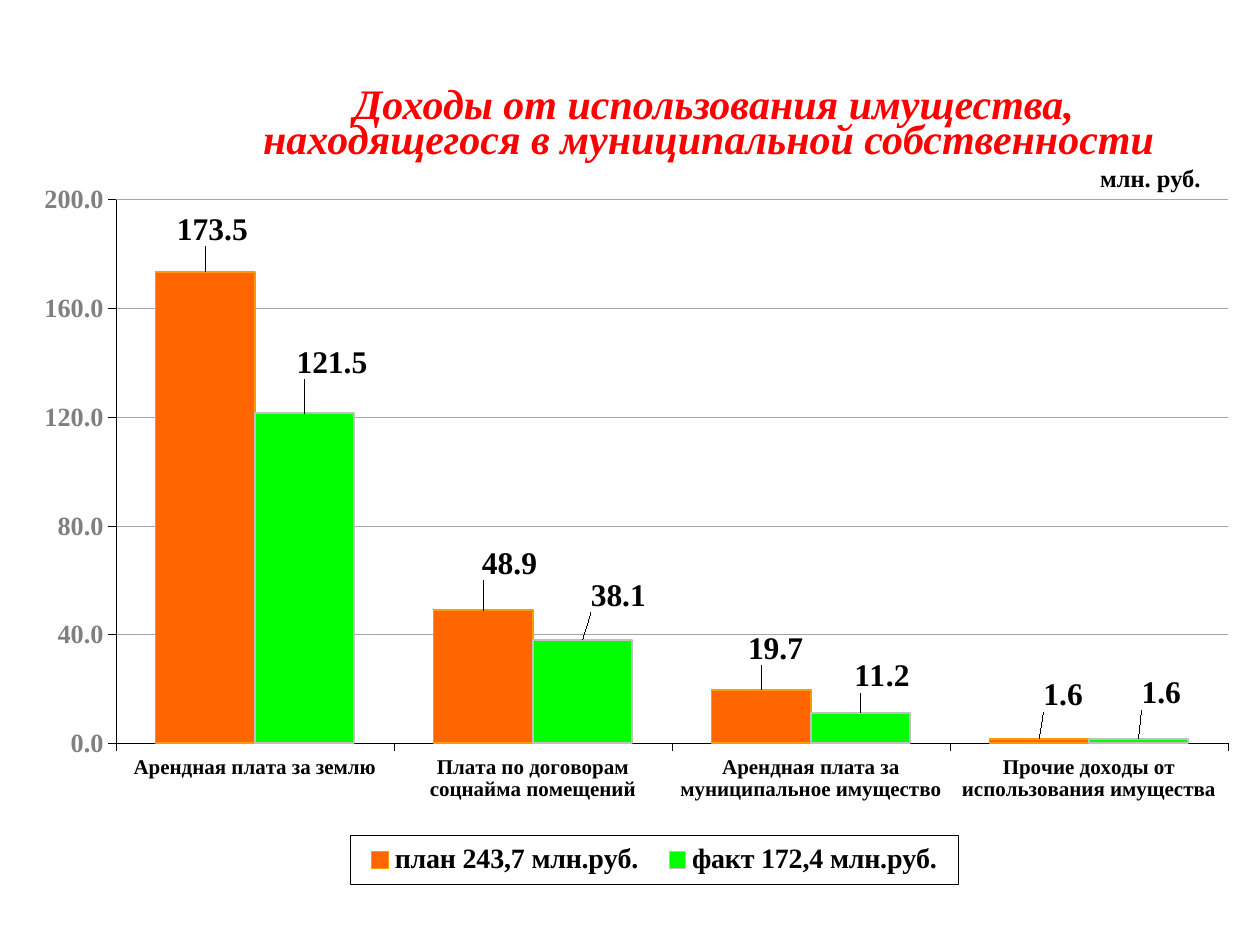
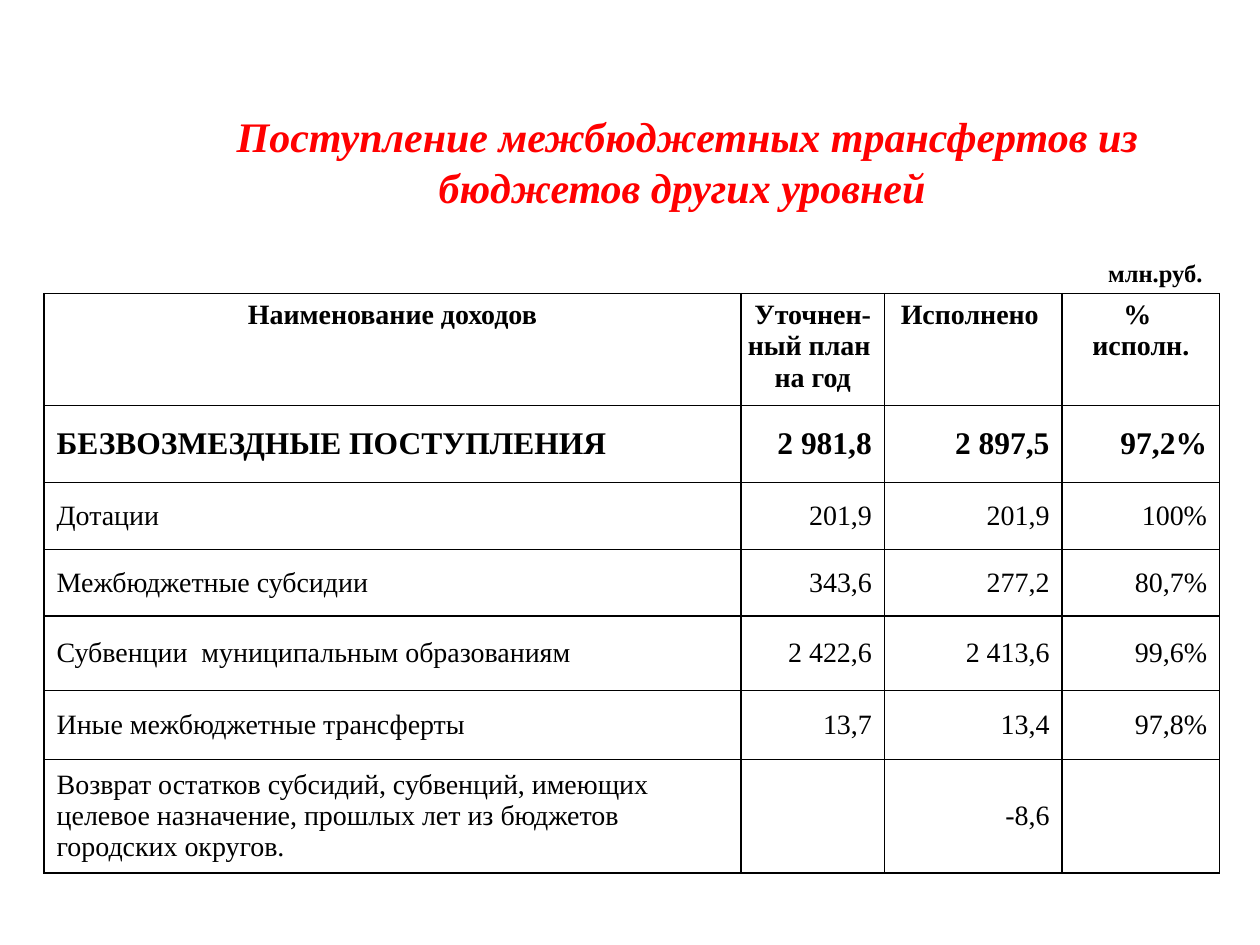
"""Build two slides on municipal budget income: a plan/fact chart and a transfers table."""
from dataclasses import dataclass

from pptx import Presentation
from pptx import util as u
from pptx.chart.data import CategoryChartData
from pptx.dml.color import RGBColor
from pptx.enum import chart as charts, text as texts
from pptx.oxml import parse_xml
from pptx.oxml.ns import nsdecls, qn

FACE = "Times New Roman"
BLACK, RED, GREY, GRID = "000000", "FF0000", "808080", "A6A6A6"
WIDTH, HEIGHT = u.Inches(10), u.Inches(7.5)
CENTER, RIGHT, LEFT = texts.PP_ALIGN.CENTER, texts.PP_ALIGN.RIGHT, texts.PP_ALIGN.LEFT
TOP, MIDDLE = texts.MSO_ANCHOR.TOP, texts.MSO_ANCHOR.MIDDLE


@dataclass(frozen=True)
class Area:
    """A rectangle in percent of the slide's width and height."""
    left: float
    top: float
    width: float
    height: float

    def box(self) -> tuple:
        """Return left, top, width and height as lengths."""
        return across(self.left), down(self.top), across(self.width), down(self.height)


@dataclass(frozen=True)
class Bars:
    """One chart series with label shifts in percent of the chart."""
    name: str
    values: tuple
    fill: str
    edge: str
    shifts: tuple


@dataclass(frozen=True)
class Row:
    """One table row with its height in percent of the slide."""
    height: float
    cells: tuple
    size: int = 16
    bold: bool = False
    header: bool = False


CATEGORIES = (
    "Арендная плата за землю",
    "Плата по договорам соцнайма помещений",
    "Арендная плата за муниципальное имущество",
    "Прочие доходы от использования имущества",
)
SERIES = (
    Bars("план 243,7 млн.руб.", (173.5, 48.9, 19.7, 1.6), "FF6600", "FF9900",
         ((0.6, -2.8), (2.2, -3.5), (1.2, -2.7), (2, -3.1))),
    Bars("факт 172,4 млн.руб.", (121.5, 38.1, 11.2, 1.6), "00FF00", "C0C0C0",
         ((2.3, -4), (3, -3.1), (1.8, -2.1), (1.9, -3.4))),
)
COLUMNS = (55.3, 11.4, 14.1, 12.5)
ROWS = (
    Row(6.27, ("", "", "", "")),
    Row(11.87, ("Наименование доходов", "Уточнен-\nный план \nна год", "Исполнено ",
                "% \nисполн."), bold=True, header=True),
    Row(8.13, ("БЕЗВОЗМЕЗДНЫЕ ПОСТУПЛЕНИЯ", "2 981,8", "2 897,5", "97,2%"), size=18, bold=True),
    Row(7.07, ("Дотации", "201,9", "201,9", "100%")),
    Row(7.07, ("Межбюджетные субсидии", "343,6", "277,2", "80,7%")),
    Row(7.87, ("Субвенции  муниципальным образованиям", "2 422,6", "2 413,6", "99,6%")),
    Row(7.33, ("Иные межбюджетные трансферты", "13,7", "13,4", "97,8%")),
    Row(12, ("Возврат остатков субсидий, субвенций, имеющих\n"
             "целевое назначение, прошлых лет из бюджетов\nгородских округов.", "", "-8,6", "")),
)


def across(percent: float) -> int:
    """Return a share of the slide's width."""
    return round(WIDTH * percent / 100)


def down(percent: float) -> int:
    """Return a share of the slide's height."""
    return round(HEIGHT * percent / 100)


def color(code: str) -> RGBColor:
    """Turn a hex string into a colour."""
    return RGBColor.from_string(code)


def style_font(font, size: float, code: str = BLACK, bold: bool = True, italic: bool = False) -> None:
    """Format a font."""
    font.name, font.size, font.bold, font.italic = FACE, u.Pt(size), bold, italic
    font.color.rgb = color(code)


def style_line(line, code: str, width: float) -> None:
    """Format an outline."""
    line.color.rgb, line.width = color(code), u.Pt(width)


def write(frame, content: str, *, size: float, code: str = BLACK, bold: bool = True,
          italic: bool = False, align=CENTER, spacing: float = 1.0) -> None:
    """Fill a text frame with one paragraph for each line of content."""
    for index, line in enumerate(content.split("\n")):
        para = frame.add_paragraph() if index else frame.paragraphs[0]
        para.alignment, para.line_spacing = align, spacing
        span = para.add_run()
        span.text = line
        style_font(span.font, size, code, bold, italic)


def add_page(deck, heading: str, area: Area, spacing: float = 1.0):
    """Add a title-only slide with the shared red heading."""
    page = deck.slides.add_slide(deck.slide_layouts[5])
    title = page.shapes.title
    title.left, title.top, title.width, title.height = area.box()
    frame = title.text_frame
    frame.word_wrap, frame.auto_size = True, texts.MSO_AUTO_SIZE.NONE
    frame.vertical_anchor = MIDDLE
    write(frame, heading, size=24, code=RED, italic=True, spacing=spacing)
    return page


def add_unit(page, label: str, area: Area) -> None:
    """Add the unit of measure."""
    frame = page.shapes.add_textbox(*area.box()).text_frame
    frame.word_wrap, frame.vertical_anchor = True, MIDDLE
    frame.margin_left = frame.margin_right = 0
    write(frame, label, size=14)


def manual_layout(inner: bool = False, **shares: float):
    """Build a chart layout element from percentages of the chart."""
    target = '<c:layoutTarget val="inner"/>' if inner else ""
    modes = "".join(f'<c:{key}Mode val="edge"/>' for key in "xy") if "w" in shares else ""
    values = "".join(f'<c:{key} val="{share / 100:.4f}"/>' for key, share in shares.items())
    return parse_xml(f'<c:layout {nsdecls("c")}><c:manualLayout>{target}{modes}{values}'
                     "</c:manualLayout></c:layout>")


def style_axis(axis, size: float, code: str) -> None:
    """Format an axis and its tick labels."""
    style_font(axis.tick_labels.font, size, code)
    style_line(axis.format.line, BLACK, 0.25)
    axis.major_tick_mark, axis.minor_tick_mark = charts.XL_TICK_MARK.OUTSIDE, charts.XL_TICK_MARK.NONE


def style_series(series, bars: Bars) -> None:
    """Colour a series and place its value labels."""
    series.format.fill.solid()
    series.format.fill.fore_color.rgb = color(bars.fill)
    style_line(series.format.line, bars.edge, 1)
    series.invert_if_negative = False
    labels = series.data_labels
    labels.show_value, labels.number_format, labels.number_format_is_linked = True, "0.0", False
    style_font(labels.font, 18)
    for index in range(len(bars.shifts)):
        label = series.points[index].data_label
        style_font(label.font, 18)
        label.position = charts.XL_LABEL_POSITION.OUTSIDE_END
    for element, (x, y) in zip(series._element.iter(qn("c:dLbl")), bars.shifts):
        element.insert(1, manual_layout(x=x, y=y))


def add_legend(chart) -> None:
    """Add a framed legend below the plot."""
    chart.has_legend = True
    legend = chart.legend
    legend.position = charts.XL_LEGEND_POSITION.BOTTOM
    legend.include_in_layout = False
    style_font(legend.font, 16)
    element = legend._element
    element.find(qn("c:legendPos")).addnext(manual_layout(x=25.6, y=91.8, w=50.8, h=6.9))
    element.find(qn("c:txPr")).addprevious(parse_xml(
        f'<c:spPr {nsdecls("c", "a")}><a:ln w="{u.Pt(0.25)}"><a:solidFill>'
        f'<a:srgbClr val="{BLACK}"/></a:solidFill></a:ln></c:spPr>'))


def add_income_chart(page, area: Area) -> None:
    """Add the clustered columns of plan against fact."""
    data = CategoryChartData(number_format="0.0")
    data.categories = CATEGORIES
    for bars in SERIES:
        data.add_series(bars.name, bars.values)
    chart = page.shapes.add_chart(charts.XL_CHART_TYPE.COLUMN_CLUSTERED, *area.box(), data).chart
    chart.has_title = False
    style_font(chart.font, 18)
    plot = chart.plots[0]
    plot.gap_width, plot.overlap, plot.vary_by_categories = 80, 0, False
    for series, bars in zip(plot.series, SERIES):
        style_series(series, bars)
    style_axis(chart.category_axis, 12, BLACK)
    chart.category_axis.tick_label_position = charts.XL_TICK_LABEL_POSITION.LOW
    values = chart.value_axis
    style_axis(values, 15, GREY)
    values.minimum_scale, values.maximum_scale, values.major_unit = 0, 200, 40
    values.tick_labels.number_format, values.tick_labels.number_format_is_linked = "0.0", False
    style_line(values.major_gridlines.format.line, GRID, 0.25)
    plot_area = plot._element.getparent()
    for old in plot_area.findall(qn("c:layout")):
        plot_area.remove(old)
    plot_area.insert(0, manual_layout(inner=True, x=6, y=1.9, w=92.9, h=76.9))
    add_legend(chart)


def add_borders(cell, sides: str) -> None:
    """Draw thin black borders on the sides named by letter."""
    properties = cell._tc.get_or_add_tcPr()
    for index, side in enumerate(sides):
        properties.insert(index, parse_xml(
            f'<a:ln{side} {nsdecls("a")} w="{u.Pt(1)}"><a:solidFill>'
            f'<a:srgbClr val="{BLACK}"/></a:solidFill></a:ln{side}>'))


def add_transfers_table(page, area: Area) -> None:
    """Add the table of transfers below a borderless top row."""
    table = page.shapes.add_table(len(ROWS), len(COLUMNS), *area.box()).table
    table.first_row = table.horz_banding = False
    for column, width in zip(table.columns, COLUMNS):
        column.width = across(width)
    for row_index, row in enumerate(ROWS):
        table.rows[row_index].height = down(row.height)
        for column_index, content in enumerate(row.cells):
            cell = table.cell(row_index, column_index)
            cell.fill.background()
            add_borders(cell, "LRTB" if row_index else "B")
            cell.vertical_anchor = TOP if row.header else MIDDLE
            if row.header and column_index == 1:
                cell.margin_left = cell.margin_right = u.Inches(0.02)
            if content:
                align = CENTER if row.header else RIGHT if column_index else LEFT
                write(cell.text_frame, content, size=row.size, bold=row.bold, align=align)


def main() -> None:
    """Build and save the deck."""
    deck = Presentation()
    deck.slide_width, deck.slide_height = WIDTH, HEIGHT
    page = add_page(deck, "Доходы от использования имущества, находящегося в муниципальной собственности ",
                    Area(17.5, 8.93, 78.3, 8.93), spacing=0.7)
    add_income_chart(page, Area(3.5, 19.6, 95, 74.93))
    add_unit(page, "млн. руб.", Area(86.2, 16.53, 10.2, 4.53))
    page = add_page(deck, "Поступление межбюджетных трансфертов из бюджетов других уровней ",
                    Area(13.3, 11.07, 82.5, 12))
    add_transfers_table(page, Area(3.5, 24.8, 93.3, 67.6))
    add_unit(page, "млн.руб.", Area(86.7, 26.67, 10, 4.4))
    deck.save("out.pptx")


if __name__ == "__main__":
    main()
